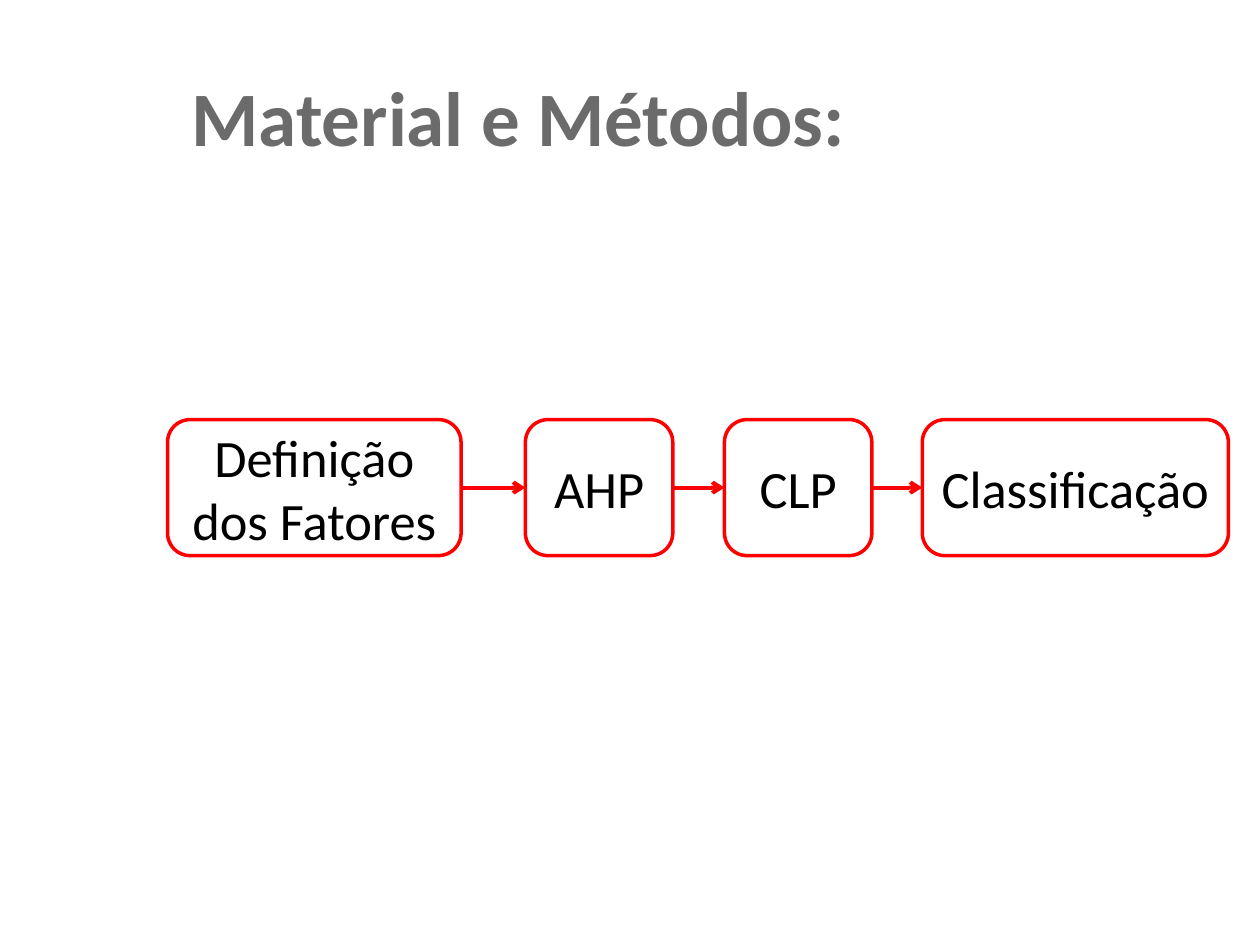
from lxml.etree import SubElement
from pptx import Presentation
from pptx.dml.color import RGBColor
from pptx.enum.shapes import MSO_CONNECTOR, MSO_SHAPE
from pptx.enum.text import MSO_ANCHOR, PP_ALIGN
from pptx.oxml.ns import qn
from pptx.util import Inches, Pt

# Content: each step with its left edge and width in inches
TITLE = "Material e Métodos:"
STEPS = [
    ("Definição dos Fatores", 1.33, 2.33),
    ("AHP", 4.17, 1.17),
    ("CLP", 5.75, 1.17),
    ("Classificação", 7.32, 2.43),
]
STEP_TOP, STEP_HEIGHT = 3.33, 1.08
FONT, RED, BLACK, GREY = "Calibri", "FF0000", "000000", "6B6B6B"


def color(code):
    return RGBColor.from_string(code)


def write(frame, text, size, code, align, bold=False):
    frame.word_wrap = True
    frame.vertical_anchor = MSO_ANCHOR.MIDDLE
    paragraph = frame.paragraphs[0]
    paragraph.alignment = align
    run = paragraph.add_run()
    run.text = text
    run.font.name, run.font.size, run.font.bold = FONT, Pt(size), bold
    run.font.color.rgb = color(code)


def add_step(slide, text, left, width):
    step = slide.shapes.add_shape(
        MSO_SHAPE.ROUNDED_RECTANGLE,
        Inches(left), Inches(STEP_TOP), Inches(width), Inches(STEP_HEIGHT))
    step.shadow.inherit = False
    step.fill.background()
    step.line.color.rgb = color(RED)
    step.line.width = Pt(2)
    step.text_frame.margin_left = step.text_frame.margin_right = Inches(0.05)
    write(step.text_frame, text, 30, BLACK, PP_ALIGN.CENTER)


def add_arrow(slide, start, end):
    middle = Inches(STEP_TOP + STEP_HEIGHT / 2)
    arrow = slide.shapes.add_connector(
        MSO_CONNECTOR.STRAIGHT, Inches(start), middle, Inches(end), middle)
    arrow.line.color.rgb = color(RED)
    arrow.line.width = Pt(2.25)
    SubElement(arrow.line._get_or_add_ln(), qn("a:tailEnd"), type="arrow")
    SubElement(arrow._element.spPr, qn("a:effectLst"))


def main():
    prs = Presentation()
    prs.slide_width, prs.slide_height = Inches(10), Inches(7.5)
    slide = prs.slides.add_slide(prs.slide_layouts[5])

    # Title
    title = slide.shapes.title
    title.left, title.top = Inches(1.42), Inches(0.5)
    title.width, title.height = Inches(8.08), Inches(0.83)
    write(title.text_frame, TITLE, 44, GREY, PP_ALIGN.LEFT, bold=True)

    # Process steps
    for text, left, width in STEPS:
        add_step(slide, text, left, width)

    # Arrows across the gaps
    for (_, left, width), (_, next_left, _) in zip(STEPS, STEPS[1:]):
        add_arrow(slide, left + width, next_left)

    prs.save("out.pptx")


if __name__ == "__main__":
    main()
